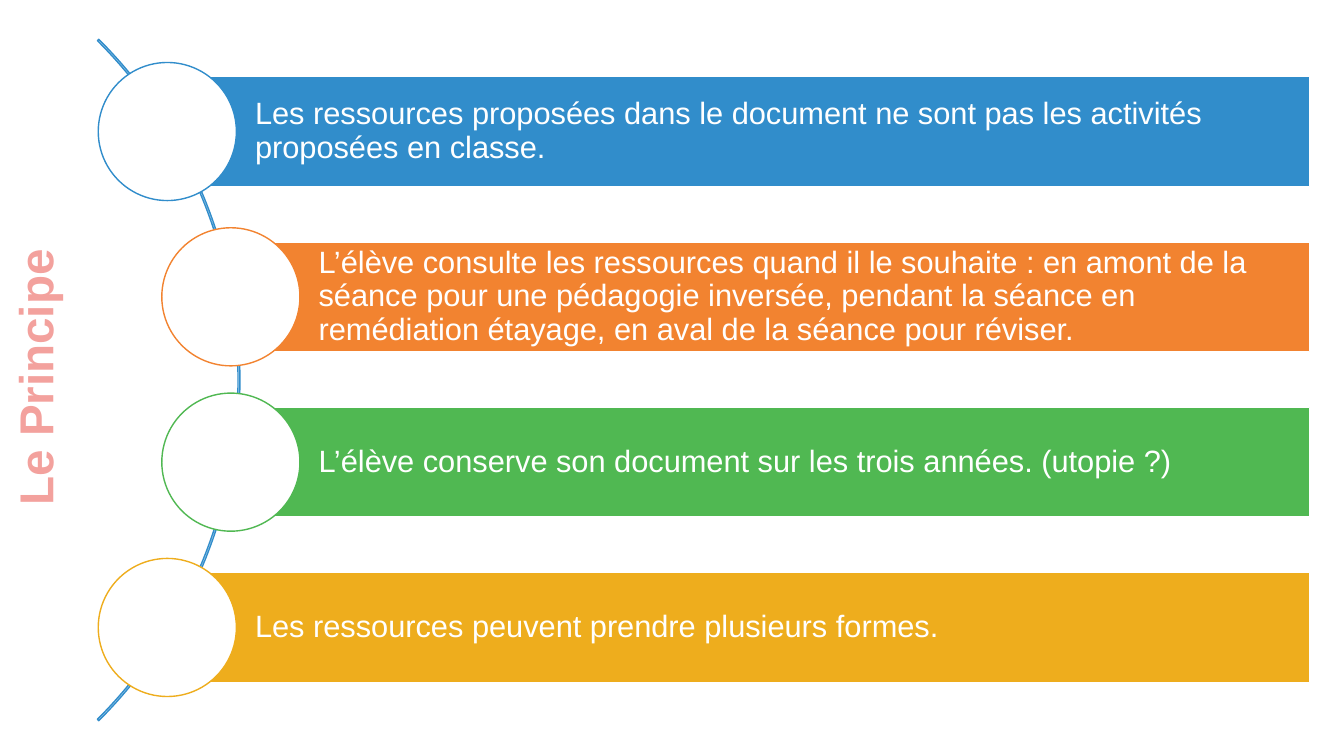
from pptx import Presentation
from pptx.dml.color import RGBColor
from pptx.enum.shapes import MSO_SHAPE
from pptx.enum.text import MSO_ANCHOR, MSO_AUTO_SIZE, PP_ALIGN
from pptx.util import Inches, Pt

RECTANGLE, OVAL, BLOCK_ARC = MSO_SHAPE.RECTANGLE, MSO_SHAPE.OVAL, MSO_SHAPE.BLOCK_ARC
MIDDLE = MSO_ANCHOR.MIDDLE
NO_AUTOFIT = MSO_AUTO_SIZE.NONE
LEFT, CENTER = PP_ALIGN.LEFT, PP_ALIGN.CENTER

TITLE_ONLY = 5
FONT = "Arial"
WHITE, BLUE, PINK = "FFFFFF", "318DCB", "F3A19D"

# Bars end at a common right edge; each circle is centred on its bar's left edge
BAR_RIGHT, BAR_HEIGHT = 12.99, 1.09
FIRST_BAR_TOP, BAR_STEP = 0.76, 1.64
CIRCLE_SIZE = 1.37
OUTER, INNER = 1.66, 2.29

PRINCIPLES = [
    (OUTER, BLUE, "Les ressources proposées dans le document ne sont pas les activités "
                  "proposées en classe."),
    (INNER, "F28330", "L’élève consulte les ressources quand il le souhaite : en amont de la "
                      "séance pour une pédagogie inversée, pendant la séance en remédiation "
                      "étayage, en aval de la séance pour réviser."),
    (INNER, "50B852", "L’élève conserve son document sur les trois années. (utopie ?)"),
    (OUTER, "EEAD1D", "Les ressources peuvent prendre plusieurs formes."),
]


def color(hex_string):
    return RGBColor.from_string(hex_string)


def add_shape(slide, kind, left, top, width, height, fill, line):
    shape = slide.shapes.add_shape(
        kind, Inches(left), Inches(top), Inches(width), Inches(height))
    shape.shadow.inherit = False
    if fill:
        shape.fill.solid()
        shape.fill.fore_color.rgb = color(fill)
    else:
        shape.fill.background()
    shape.line.color.rgb = color(line)
    shape.line.width = Pt(1)
    return shape


def write_text(shape, text, size, hex_string, alignment, bold=False):
    frame = shape.text_frame
    frame.text = text
    frame.word_wrap = True
    frame.auto_size = NO_AUTOFIT
    frame.vertical_anchor = MIDDLE
    paragraph = frame.paragraphs[0]
    paragraph.alignment = alignment
    font = paragraph.runs[0].font
    font.name = FONT
    font.size = Pt(size)
    font.bold = bold
    font.color.rgb = color(hex_string)


def add_side_title(slide, text):
    title = slide.shapes.title
    title.left, title.top = Inches(-3.41), Inches(3.41)
    title.width, title.height = Inches(7.5), Inches(0.67)
    title.rotation = 270
    write_text(title, text, 34, PINK, CENTER, bold=True)


def add_arc(slide):
    arc = add_shape(slide, BLOCK_ARC, -7.18, -1.01, 9.56, 9.56, None, BLUE)
    # Start angle, end angle and thickness
    for index, value in enumerate((189, 27, 0.002)):
        arc.adjustments[index] = value


def add_principle(slide, left, top, hex_string, text):
    bar = add_shape(slide, RECTANGLE, left, top, BAR_RIGHT - left, BAR_HEIGHT,
                    hex_string, WHITE)
    write_text(bar, text, 22, WHITE, LEFT)
    frame = bar.text_frame
    frame.margin_left = Inches(0.87)
    frame.margin_right = frame.margin_top = frame.margin_bottom = Inches(0.06)
    frame.paragraphs[0].line_spacing = 0.9
    add_shape(slide, OVAL, left - CIRCLE_SIZE / 2, top + (BAR_HEIGHT - CIRCLE_SIZE) / 2,
              CIRCLE_SIZE, CIRCLE_SIZE, WHITE, hex_string)


def main():
    presentation = Presentation()
    presentation.slide_width = Inches(13.33)
    presentation.slide_height = Inches(7.5)
    slide = presentation.slides.add_slide(presentation.slide_layouts[TITLE_ONLY])

    add_side_title(slide, "Le Principe")
    add_arc(slide)
    for row, (left, hex_string, text) in enumerate(PRINCIPLES):
        add_principle(slide, left, FIRST_BAR_TOP + row * BAR_STEP, hex_string, text)

    presentation.save("out.pptx")


if __name__ == "__main__":
    main()
